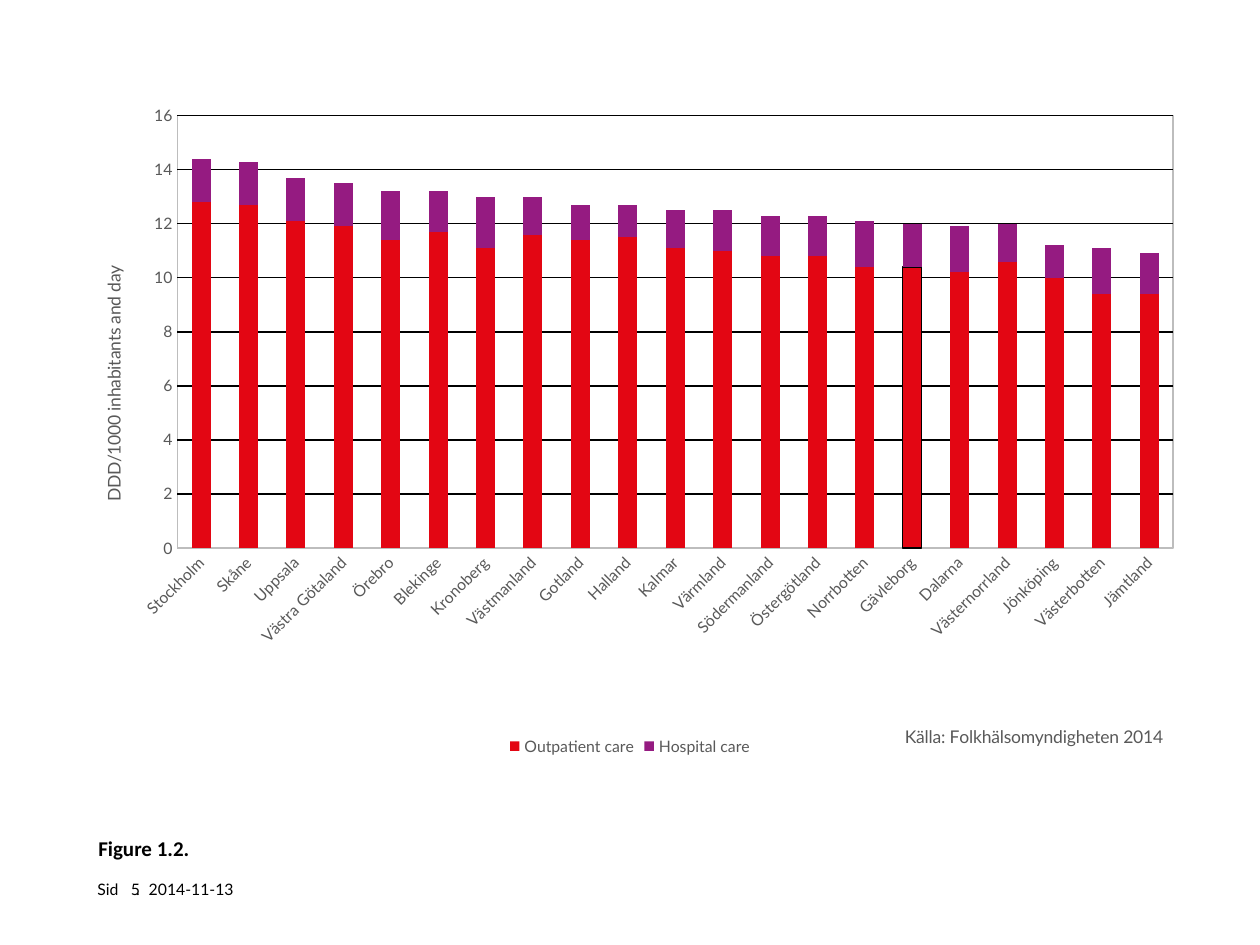
from lxml import etree
from pptx import Presentation
from pptx import util as u
from pptx.chart import data as chart_data
from pptx.dml import color
from pptx.enum import chart as chart_enum, text
from pptx.oxml import parse_xml
from pptx.oxml import ns

COLOURS = {"text": "000000", "label": "595959", "axis": "BDBDBD", "grid": "000000",
           "Outpatient care": "E30613", "Hospital care": "951B81"}


def rgb(name):
    return color.RGBColor.from_string(COLOURS[name])


def set_layout(parent, index, inner=False, **fractions):
    """Give a plot area or chart title a manual position."""
    old = parent.find(ns.qn("c:layout"))
    if old is not None:
        parent.remove(old)
    layout = etree.Element(ns.qn("c:layout"))
    manual = etree.SubElement(layout, ns.qn("c:manualLayout"))
    settings = {"layoutTarget": "inner"} if inner else {}
    settings.update(xMode="edge", yMode="edge", **fractions)
    for tag, value in settings.items():
        etree.SubElement(manual, ns.qn(f"c:{tag}")).set("val", str(value))
    parent.insert(index, layout)


presentation = Presentation()
presentation.slide_width, presentation.slide_height = u.Pt(720), u.Pt(540)
slide = presentation.slides.add_slide(presentation.slide_layouts[6])

# Chart data: region, outpatient care, hospital care
regions = [
    ("Stockholm", 12.8, 1.6), ("Skåne", 12.7, 1.6), ("Uppsala", 12.1, 1.6),
    ("Västra Götaland", 11.9, 1.6), ("Örebro", 11.4, 1.8), ("Blekinge", 11.7, 1.5),
    ("Kronoberg", 11.1, 1.9), ("Västmanland", 11.6, 1.4), ("Gotland", 11.4, 1.3),
    ("Halland", 11.5, 1.2), ("Kalmar", 11.1, 1.4), ("Värmland", 11, 1.5),
    ("Södermanland", 10.8, 1.5), ("Östergötland", 10.8, 1.5), ("Norrbotten", 10.4, 1.7),
    ("Gävleborg", 10.4, 1.6), ("Dalarna", 10.2, 1.7), ("Västernorrland", 10.6, 1.4),
    ("Jönköping", 10, 1.2), ("Västerbotten", 9.4, 1.7), ("Jämtland", 9.4, 1.5),
]
names, outpatient, hospital = zip(*regions)
data = chart_data.CategoryChartData()
data.categories = names
data.add_series("Outpatient care", outpatient)
data.add_series("Hospital care", hospital)

# Stacked column chart
chart = slide.shapes.add_chart(
    chart_enum.XL_CHART_TYPE.COLUMN_STACKED,
    u.Pt(36.7), u.Pt(54.7), u.Pt(646.6), u.Pt(380.2), data).chart
chart.has_title = False
chart.font.name, chart.font.size = "Lato", u.Pt(10)
chart.font.color.rgb = rgb("text")
plot = chart.plots[0]
plot.gap_width, plot.overlap, plot.vary_by_categories = 150, 100, False
for series in plot.series:
    series.format.fill.solid()
    series.format.fill.fore_color.rgb = rgb(series.name)

# Outlined column for Gävleborg
highlight = plot.series[0].points[names.index("Gävleborg")].format
highlight.fill.solid()
highlight.fill.fore_color.rgb = rgb("Outpatient care")
highlight.line.color.rgb = rgb("text")
highlight.line.width = u.Pt(0.75)

# Axes and their titles
category_axis, value_axis = chart.category_axis, chart.value_axis
for axis, title, position in (
        (category_axis, "Källa: Folkhälsomyndigheten 2014", {"x": 0.74, "y": 0.94}),
        (value_axis, "DDD/1000 inhabitants and day", {"x": 0.03, "y": 0.25})):
    axis.major_tick_mark = axis.minor_tick_mark = chart_enum.XL_TICK_MARK.NONE
    axis.axis_title.text_frame.text = title
    title_font = axis.axis_title.text_frame.paragraphs[0].runs[0].font
    title_font.size, title_font.bold = u.Pt(10), False
    for font in (axis.tick_labels.font, title_font):
        font.name = "Lato"
        font.color.rgb = rgb("label")
    axis.tick_labels.font.size = u.Pt(9)
    set_layout(axis.axis_title._element, 1, **position)
value_axis.axis_title.text_frame._txBody.bodyPr.set("rot", "-5400000")
category_axis.tick_labels.font._element.getparent().getparent().getparent().find(
    ns.qn("a:bodyPr")).set("rot", "-2700000")
category_axis.format.line.color.rgb = rgb("axis")
category_axis.format.line.width = u.Pt(0.75)
value_axis.format.line.fill.background()
value_axis.minimum_scale, value_axis.maximum_scale, value_axis.major_unit = 0, 16, 2
value_axis.tick_labels.number_format = "0"
value_axis.tick_labels.number_format_is_linked = False
value_axis.major_gridlines.format.line.color.rgb = rgb("grid")
value_axis.major_gridlines.format.line.width = u.Pt(0.75)

# Plot area position and border
plot_area = chart._chartSpace.chart.plotArea
set_layout(plot_area, 0, inner=True, x=0.1, y=0.03, w=0.88, h=0.65)
plot_area.append(parse_xml(
    f'<c:spPr {ns.nsdecls("c", "a")}><a:noFill/><a:ln w="9525"><a:solidFill>'
    f'<a:srgbClr val="{COLOURS["axis"]}"/></a:solidFill></a:ln></c:spPr>'))

# Legend
chart.has_legend = True
chart.legend.position = chart_enum.XL_LEGEND_POSITION.BOTTOM
chart.legend.include_in_layout = False
chart.legend.font.name, chart.legend.font.size = "Lato", u.Pt(9)
chart.legend.font.color.rgb = rgb("label")

# Caption and footer: text, left, top, width, height, inset, anchor, alignment, wrap
top, bottom = text.MSO_ANCHOR.TOP, text.MSO_ANCHOR.BOTTOM
left, right = text.PP_ALIGN.LEFT, text.PP_ALIGN.RIGHT
labels = [
    (".", 73.4, 499, 11.5, 18, (7.2, 3.6), top, left, True),
    ("Sid", 55.7, 502.6, 12.2, 10.8, (0, 0), top, left, False),
    ("5", 56.2, 499, 23.8, 14.4, (0, 0), bottom, right, True),
    ("2014-11-13", 85, 499, 61.9, 14.4, (0, 0), bottom, left, True),
    ("Figure 1.2.", 56.2, 459.4, 230.4, 32.4, (0, 0), bottom, left, True),
]
for label, x, y, width, height, inset, anchor, alignment, wrap in labels:
    frame = slide.shapes.add_textbox(u.Pt(x), u.Pt(y), u.Pt(width), u.Pt(height)).text_frame
    frame.text = label
    frame.word_wrap, frame.vertical_anchor = wrap, anchor
    frame.margin_left = frame.margin_right = u.Pt(inset[0])
    frame.margin_top = frame.margin_bottom = u.Pt(inset[1])
    paragraph = frame.paragraphs[0]
    paragraph.alignment = alignment
    font = paragraph.runs[0].font
    font.name, font.size = "Lato", u.Pt(9)
    font.color.rgb = rgb("text")

# The caption comes last and is set larger
paragraph.line_spacing = u.Pt(34)
font.name, font.size, font.bold = "Calibri", u.Pt(12), True

presentation.save("out.pptx")
